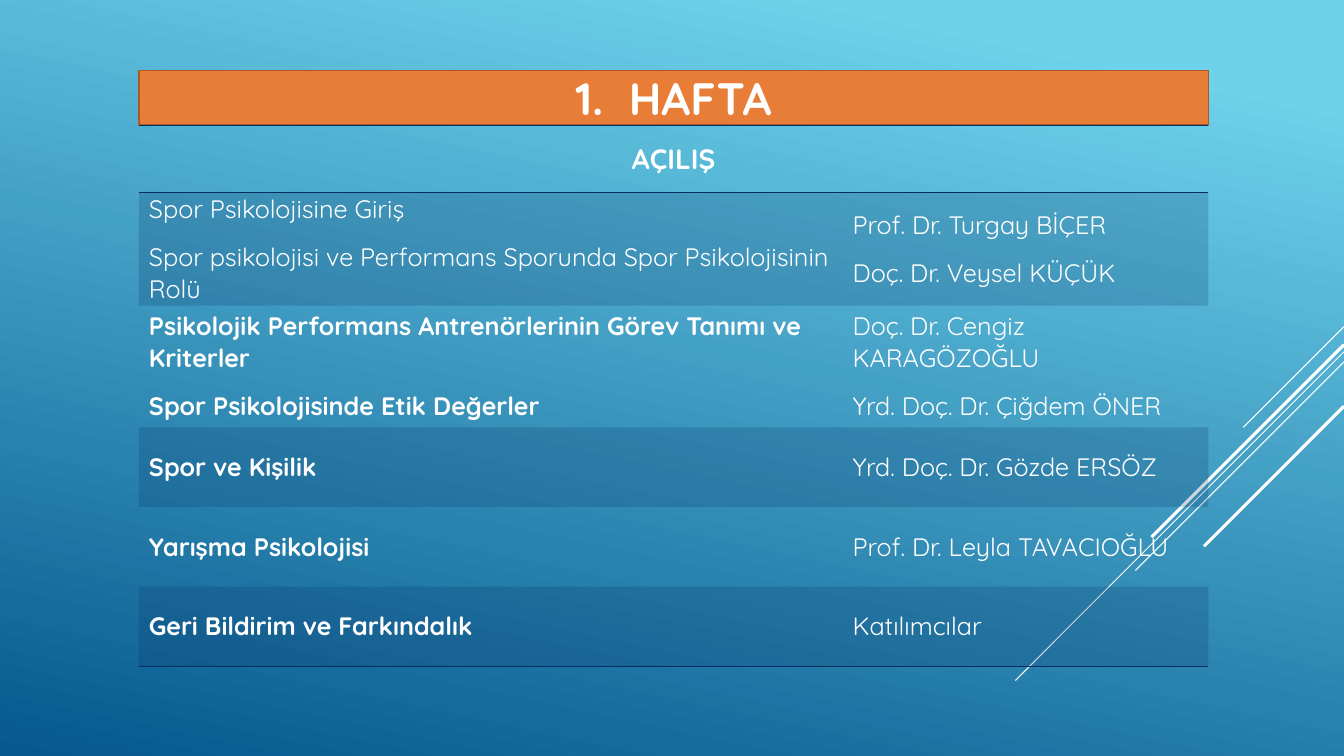
from lxml import etree
from pptx import Presentation
from pptx.dml.color import RGBColor
from pptx.enum.shapes import MSO_CONNECTOR as Connector, MSO_SHAPE as Shape
from pptx.enum.text import MSO_ANCHOR as Anchor, PP_ALIGN as Align
from pptx.oxml.ns import qn
from pptx.util import Pt

# Content
TITLE = "1.\tHAFTA"
OPENING = "AÇILIŞ"
# row height, topics, topics in bold, speakers
SESSIONS = [
    (80.64, ["Spor Psikolojisine Giriş",
             "Spor psikolojisi ve Performans Sporunda Spor Psikolojisinin Rolü"], False,
     ["Prof. Dr. Turgay BİÇER", "Doç. Dr. Veysel KÜÇÜK"]),
    (87, ["Psikolojik Performans Antrenörlerinin Görev Tanımı ve Kriterler",
          "Spor Psikolojisinde Etik Değerler"], True,
     ["Doç. Dr. Cengiz KARAGÖZOĞLU", "Yrd. Doç. Dr. Çiğdem ÖNER"]),
    (56.88, ["Spor ve Kişilik"], True, ["Yrd. Doç. Dr. Gözde ERSÖZ"]),
    (56.88, ["Yarışma Psikolojisi"], True, ["Prof. Dr. Leyla TAVACIOĞLU"]),
    (56.88, ["Geri Bildirim ve Farkındalık"], True, ["Katılımcılar"]),
]
# diagonals from the right edge: top, run, line width
DIAGONALS = [(233.3, 72, 0.75), (251.3, 234.7, 0.75), (258.5, 149, 0.75),
             (246.2, 137.5, 2.25), (290.2, 100, 2.25)]

# Look and layout
COLOURS = {"sky": "6ED2EB", "deep": "06588E", "text": "FFFFFF", "title": "E87D37",
           "title_edge": "AC5929", "navy": "052F61"}
FONT = "Quicksand"
WIDTH, HEIGHT = 960, 540
LEFT, TITLE_TOP, TITLE_HEIGHT = 99.2, 50.4, 39
COLUMNS = [502.6, 261.4]
OPENING_HEIGHT = 48.24
NO_STYLE = "{2D5ABB26-0587-4C30-8999-92F81FD0307C}"


def rgb(name):
    return RGBColor.from_string(COLOURS[name])


def write(frame, lines, size=18, bold=False, align=Align.LEFT, space=6):
    for index, line in enumerate(lines):
        para = frame.add_paragraph() if index else frame.paragraphs[0]
        para.alignment = align
        para.space_before = para.space_after = Pt(space)
        span = para.add_run()
        span.text = line
        span.font.name, span.font.size, span.font.bold = FONT, Pt(size), bold
        span.font.color.rgb = rgb("text")


def set_cell(cell, lines, shaded=False, **style):
    cell.vertical_anchor = Anchor.MIDDLE
    cell.margin_left = cell.margin_right = Pt(7.2)
    cell.margin_top = cell.margin_bottom = 0
    if shaded:
        cell.fill.solid()
        cell.fill.fore_color.rgb = rgb("navy")
        colour = cell._tc.tcPr.find(".//" + qn("a:srgbClr"))
        etree.SubElement(colour, qn("a:alpha"), val="20000")
    else:
        cell.fill.background()
    write(cell.text_frame, lines, **style)


def add_border(cell, side):
    line = etree.Element(qn("a:ln" + side), w=str(Pt(1)))
    fill = etree.SubElement(line, qn("a:solidFill"))
    etree.SubElement(fill, qn("a:srgbClr"), val=COLOURS["navy"])
    cell._tc.get_or_add_tcPr().insert(0, line)


def build():
    deck = Presentation()
    deck.slide_width, deck.slide_height = Pt(WIDTH), Pt(HEIGHT)
    page = deck.slides.add_slide(deck.slide_layouts[6])

    # Background gradient
    backdrop = page.background.fill
    backdrop.gradient()
    backdrop.gradient_angle = 258
    for stop, (position, name) in zip(backdrop.gradient_stops, [(0.1, "sky"), (1, "deep")]):
        stop.position, stop.color.rgb = position, rgb(name)

    # Diagonal lines, all at 45 degrees
    for top, run, weight in DIAGONALS:
        line = page.shapes.add_connector(Connector.STRAIGHT, Pt(WIDTH), Pt(top),
                                         Pt(WIDTH - run), Pt(top + run))
        line.line.color.rgb, line.line.width = rgb("text"), Pt(weight)
        etree.SubElement(line._element.spPr, qn("a:effectLst"))

    # Title bar
    box = page.shapes.add_shape(Shape.RECTANGLE, Pt(LEFT), Pt(TITLE_TOP),
                                Pt(sum(COLUMNS)), Pt(TITLE_HEIGHT))
    box.shadow.inherit = False
    box.fill.solid()
    box.fill.fore_color.rgb = rgb("title")
    box.line.color.rgb, box.line.width = rgb("title_edge"), Pt(1.25)
    frame = box.text_frame
    frame.word_wrap, frame.vertical_anchor = True, Anchor.MIDDLE
    frame.margin_top = frame.margin_bottom = 0
    write(frame, [TITLE], size=32.4, bold=True, align=Align.CENTER, space=0)
    tabs = etree.SubElement(frame.paragraphs[0]._p.get_or_add_pPr(), qn("a:tabLst"))
    etree.SubElement(tabs, qn("a:tab"), pos=str(Pt(38)), algn="l")

    # Programme table
    heights = [OPENING_HEIGHT] + [session[0] for session in SESSIONS]
    holder = page.shapes.add_table(len(heights), len(COLUMNS), Pt(LEFT),
                                   Pt(TITLE_TOP + TITLE_HEIGHT),
                                   Pt(sum(COLUMNS)), Pt(sum(heights)))
    table = holder.table
    table.first_row = table.horz_banding = False
    table._tbl.tblPr.find(qn("a:tableStyleId")).text = NO_STYLE
    for column, width in zip(table.columns, COLUMNS):
        column.width = Pt(width)
    for row, height in zip(table.rows, heights):
        row.height = Pt(height)

    table.cell(0, 0).merge(table.cell(0, 1))
    set_cell(table.cell(0, 0), [OPENING], size=20, bold=True, align=Align.CENTER)
    for number, (_, topics, bold, speakers) in enumerate(SESSIONS, 1):
        shaded = number % 2 == 1
        set_cell(table.cell(number, 0), topics, shaded, bold=bold)
        set_cell(table.cell(number, 1), speakers, shaded)

    # Rules around the opening row and under the table
    for column in range(len(COLUMNS)):
        for row, side in [(0, "B"), (0, "T"), (len(SESSIONS), "B")]:
            add_border(table.cell(row, column), side)

    deck.save("out.pptx")


if __name__ == "__main__":
    build()
